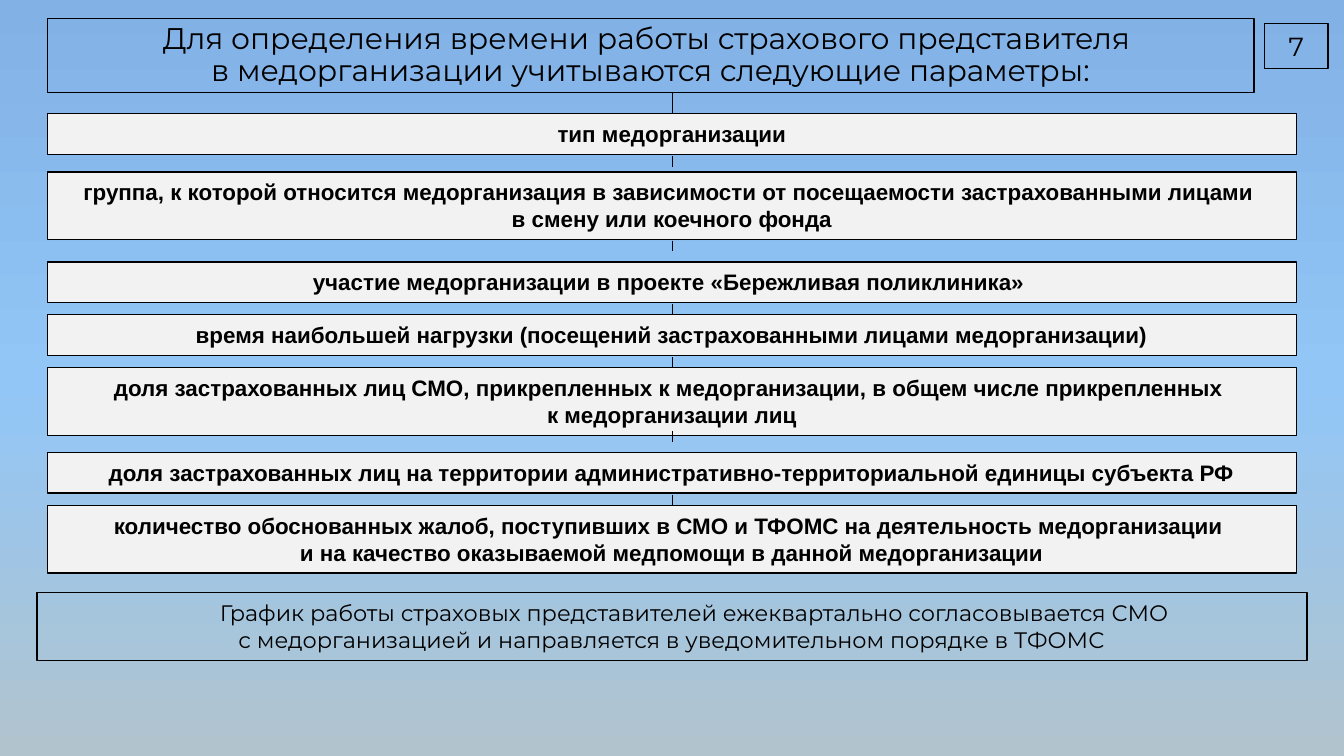
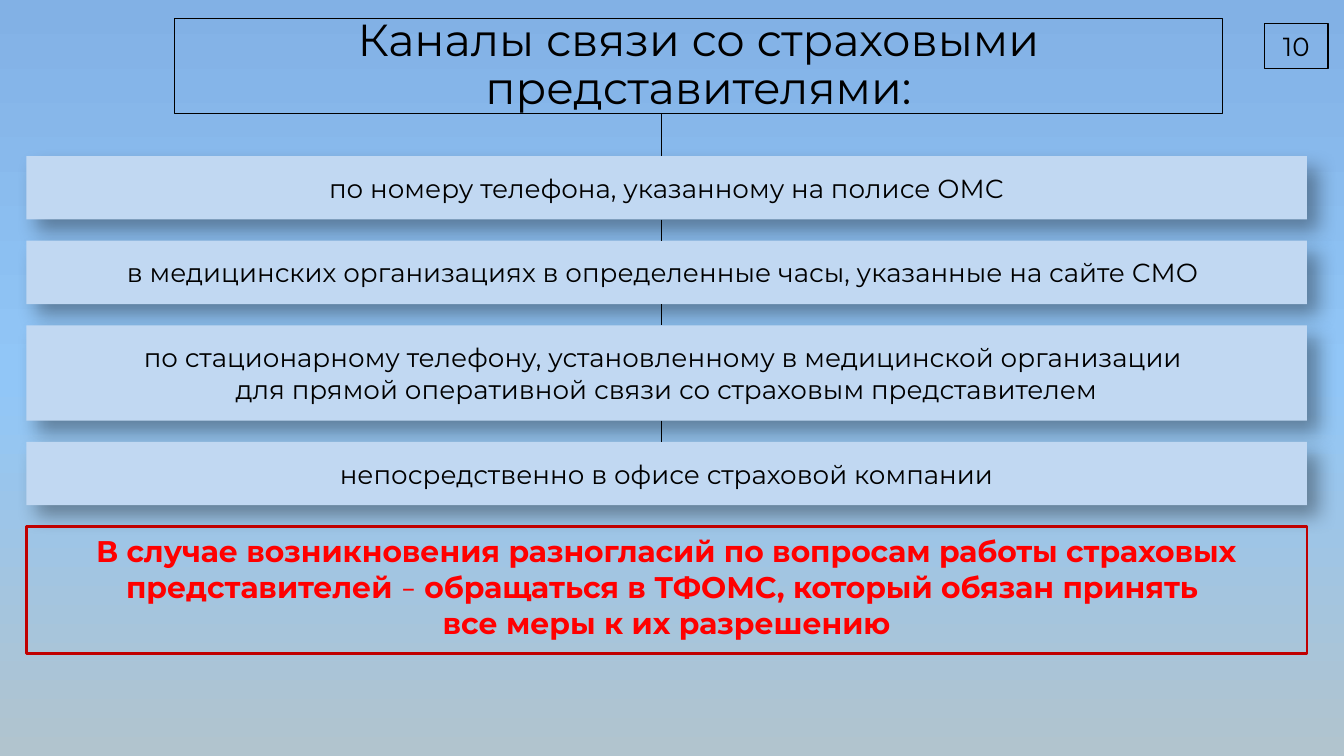
from lxml import etree
from pptx import Presentation
from pptx.dml.color import RGBColor
from pptx.enum.shapes import MSO_CONNECTOR as CONN, MSO_SHAPE as SHAPE
from pptx.enum.text import MSO_ANCHOR as ANCHOR, MSO_AUTO_SIZE as FIT, PP_ALIGN as ALIGN
from pptx.oxml import parse_xml
from pptx.oxml.ns import nsdecls, qn
from pptx.util import Inches, Mm, Pt

# Shared look
BLACK, RED, DARK_RED = "000000", "FF0000", "C00000"
GREY, PALE_BLUE = "F2F2F2", "C1D8F2"
BACKGROUND = [(0, PALE_BLUE), (0, "82B1E5"), (50, "91C6F7"), (100, "B1C4CE")]
HEAD_FONT, LIST_FONT = "Montserrat", "Arial"
TITLE_TOP = 1.75
NUMBER_BOX = (119.5, 2.25, 6, 4.25)
INSETS = (0.1, 0.05, 0.1, 0.05)


def grid(n):
    """Length of n grid cells; one cell is 2 mm."""
    return Mm(2 * n)


def rgb(color):
    return RGBColor.from_string(color)


def place(sp, box):
    for name, n in zip(("left", "top", "width", "height"), box):
        setattr(sp, name, grid(n))


def outline(sp, color, width):
    sp.line.color.rgb = rgb(color)
    sp.line.width = Pt(width)


def set_text(sp, text, size, font=HEAD_FONT, color=BLACK, bold=False,
             anchor=ANCHOR.TOP, insets=INSETS, grow=True, spacing=None):
    """Centred text; text is a string or a list of (string, font values)."""
    tf = sp.text_frame
    frame = {"word_wrap": True, "vertical_anchor": anchor,
             "auto_size": FIT.SHAPE_TO_FIT_TEXT if grow else FIT.NONE}
    for side, inset in zip(("left", "top", "right", "bottom"), insets):
        frame["margin_" + side] = Inches(inset)
    for name, value in frame.items():
        setattr(tf, name, value)
    p = tf.paragraphs[0]
    p.alignment = ALIGN.CENTER
    if spacing:
        p.line_spacing = spacing
    base = {"name": font, "size": Pt(size), "bold": bold}
    for part, changes in [(text, {})] if isinstance(text, str) else text:
        for i, line in enumerate(part.split("\n")):
            if i:
                p.add_line_break()
            r = p.add_run()
            r.text = line
            for name, value in {**base, **changes}.items():
                setattr(r.font, name, value)
            r.font.color.rgb = rgb(color)
    return p


def add_box(slide, box, fill=None, line=BLACK, width=0.75):
    sp = slide.shapes.add_shape(SHAPE.RECTANGLE, *map(grid, box))
    sp.shadow.inherit = False
    if fill:
        sp.fill.solid()
        sp.fill.fore_color.rgb = rgb(fill)
    else:
        sp.fill.background()
    if line:
        outline(sp, line, width)
    else:
        sp.line.fill.background()
    return sp


def cast_shadow(sp):
    effects = sp._element.spPr.find(qn("a:effectLst"))
    effects.append(parse_xml(
        f'<a:outerShdw {nsdecls("a")} blurRad="{Pt(10.2)}" dist="{Pt(8)}" dir="2700000" '
        f'algn="tl" rotWithShape="0"><a:srgbClr val="{BLACK}"><a:alpha val="35000"/>'
        '</a:srgbClr></a:outerShdw>'))


def add_link(slide, x, top, bottom, target=None):
    """Thin vertical line, joined to the top of target if there is one."""
    c = slide.shapes.add_connector(CONN.STRAIGHT, *map(grid, (x, top, x, bottom)))
    outline(c, BLACK, 0.25)
    etree.SubElement(c._element.spPr, qn("a:effectLst"))
    if target is not None:
        c.end_connect(target, 0)


def set_background(master):
    fill = master.background.fill
    fill.gradient()
    fill.gradient_angle = 270
    stops = next(master.element.iter(qn("a:gsLst")))
    for gs in list(stops):
        stops.remove(gs)
    for pos, color in BACKGROUND:
        stops.append(parse_xml(f'<a:gs {nsdecls("a")} pos="{pos * 1000}">'
                               f'<a:srgbClr val="{color}"/></a:gs>'))


def new_slide(prs, number, title, left, width, height, size):
    slide = prs.slides.add_slide(prs.slide_layouts[5])
    # Title
    sp = slide.shapes.title
    place(sp, (left, TITLE_TOP, width, height))
    outline(sp, BLACK, 0.75)
    set_text(sp, title, size, anchor=ANCHOR.MIDDLE, grow=False, spacing=0.9)
    # Slide number
    set_text(add_box(slide, NUMBER_BOX), number, 14)
    return slide


def parameters_slide(prs):
    left, width, title_height = 4.5, 118, 7
    slide = new_slide(
        prs, "7", "Для определения времени работы страхового представителя \n"
        "в медорганизации учитываются следующие параметры:", left, 114, title_height, 16)
    # Parameters: top row, text
    parameters = [
        (10.75, "тип медорганизации"),
        (16.25, "группа, к которой относится медорганизация в зависимости от посещаемости "
                "застрахованными лицами \nв смену или коечного фонда"),
        (24.75, "участие медорганизации в проекте «Бережливая поликлиника» "),
        (29.75, "время наибольшей нагрузки (посещений застрахованными лицами медорганизации)"),
        (34.75, "доля застрахованных лиц СМО, прикрепленных к медорганизации, в общем числе "
                "прикрепленных \nк медорганизации лиц"),
        (42.75, "доля застрахованных лиц на территории административно-территориальной "
                "единицы субъекта РФ"),
        (47.75, "количество обоснованных жалоб, поступивших в СМО и ТФОМС на деятельность "
                "медорганизации \nи на качество оказываемой медпомощи в данной медорганизации"),
    ]
    boxes = {}
    for top, text in parameters:
        height = 6.4 if "\n" in text else 3.85
        boxes[top] = add_box(slide, (left, top, width, height), GREY)
        set_text(boxes[top], text, 12, LIST_FONT, bold=True)
    # Links: from the title, then short ticks between the boxes
    ticks = [(top, top + 1) for top in (14.75, 22.75, 28.75, 33.75, 40.75, 46.75)]
    for top, bottom in [(TITLE_TOP + title_height, parameters[0][0])] + ticks:
        add_link(slide, left + width / 2, top, bottom, boxes.get(bottom))
    # Schedule note
    p = set_text(add_box(slide, (3.5, 56, 120, 6.4)),
                 "График работы страховых представителей ежеквартально согласовывается СМО \n"
                 "с медорганизацией и направляется в уведомительном порядке в ТФОМС", 12)
    p._p.get_or_add_pPr().set("indent", str(Inches(0.38)))


def channels_slide(prs):
    left, width, gap, link_x = 2.5, 121, 2, 62.5
    title_height = 9
    slide = new_slide(prs, "10", "Каналы связи со страховыми представителями:",
                      16.5, 99, title_height, 24)
    # Channels, stacked with equal gaps
    channels = [
        "по номеру телефона, указанному на полисе ОМС",
        "в медицинских организациях в определенные часы, указанные на сайте СМО ",
        "по стационарному телефону, установленному в медицинской организации \n"
        "для прямой оперативной связи со страховым представителем",
        "непосредственно в офисе страховой компании",
    ]
    links, above, top = [], TITLE_TOP + title_height, 14.75
    for text in channels:
        height = 9 if "\n" in text else 6
        sp = add_box(slide, (left, top, width, height), PALE_BLUE, line=None)
        cast_shadow(sp)
        set_text(sp, text, 14, insets=(0.04, 0.12, 0.04, 0), grow=False)
        links.append((above, top))
        above = top + height
        top = above + gap
    for start, end in links:
        add_link(slide, link_x, start, end)
    # Warning
    sp = add_box(slide, (left, top, width, 12), line=DARK_RED, width=1.25)
    set_text(sp, [
        ("В случае возникновения разногласий по вопросам работы страховых представителей ", {}),
        ("–", {"name": "Calibri", "bold": False}),
        (" обращаться в ТФОМС, который обязан принять \nвсе меры к их разрешению", {}),
    ], 16, color=RED, bold=True)


def main():
    prs = Presentation()
    prs.slide_width, prs.slide_height = Inches(10), Inches(5.625)
    set_background(prs.slide_master)
    parameters_slide(prs)
    channels_slide(prs)
    prs.save("out.pptx")


if __name__ == "__main__":
    main()
